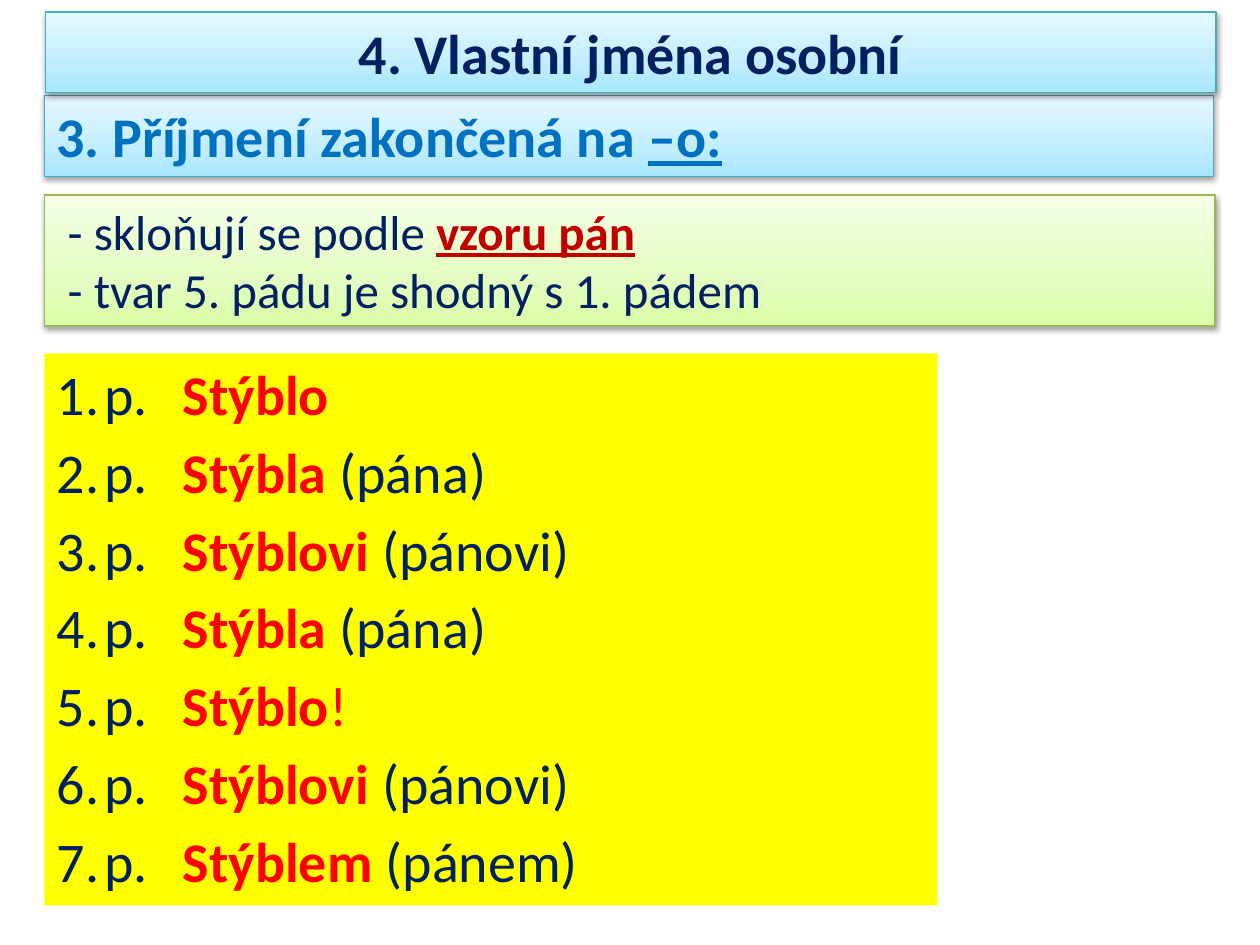
from lxml import etree
from pptx import Presentation
from pptx.dml.color import RGBColor
from pptx.enum import shapes, text
from pptx.oxml import parse_xml
from pptx.oxml.ns import nsdecls, qn
from pptx.util import Pt

NAVY = RGBColor(0x00, 0x20, 0x60)
BLUE = RGBColor(0x00, 0x70, 0xC0)
DARK = RGBColor(0xC0, 0x00, 0x00)
RED = RGBColor(0xFF, 0x00, 0x00)
YELLOW = RGBColor(0xFF, 0xFF, 0x00)
AQUA = RGBColor(0x46, 0xAA, 0xC5)
GREEN = RGBColor(0x98, 0xB9, 0x55)
SKY = [RGBColor(0xA7, 0xE6, 0xFF), RGBColor(0xC1, 0xED, 0xFF), RGBColor(0xE7, 0xF8, 0xFF)]
LIME = [RGBColor(0xDA, 0xFD, 0xA7), RGBColor(0xE4, 0xFC, 0xC2), RGBColor(0xF5, 0xFF, 0xE7)]

CASES = [
    ("Stýblo", ""),
    ("Stýbla", " (pána)"),
    ("Stýblovi", " (pánovi)"),
    ("Stýbla", " (pána)"),
    ("Stýblo", "!"),
    ("Stýblovi", " (pánovi)"),
    ("Stýblem", " (pánem)"),
]


def place(shape, box):
    shape.left, shape.top, shape.width, shape.height = map(Pt, box)
    frame = shape.text_frame
    frame.word_wrap = True
    frame.auto_size = text.MSO_AUTO_SIZE.NONE
    frame.vertical_anchor = text.MSO_ANCHOR.TOP
    return frame


def style(para, size, color, bold=False, align=text.PP_ALIGN.LEFT):
    para.alignment = align
    font = para.font
    font.name, font.size, font.bold = "Calibri", Pt(size), bold
    font.color.rgb = color


def add_run(para, words, color=None, bold=None, under=None):
    run = para.add_run()
    run.text = words
    run.font.bold, run.font.underline = bold, under
    if color is not None:
        run.font.color.rgb = color


def shade(shape, colors, edge):
    """Give a panel its three-stop gradient, thin edge and soft shadow."""
    shape.line.color.rgb = edge
    shape.line.width = Pt(0.75)
    stops = "".join(
        f'<a:gs pos="{pos}"><a:srgbClr val="{color}"/></a:gs>'
        for pos, color in zip((0, 35000, 100000), colors)
    )
    line = shape.line._get_or_add_ln()
    line.addprevious(parse_xml(
        f'<a:gradFill {nsdecls("a")} rotWithShape="1"><a:gsLst>{stops}</a:gsLst>'
        '<a:lin ang="16200000" scaled="0"/></a:gradFill>'))
    line.addnext(parse_xml(
        f'<a:effectLst {nsdecls("a")}><a:outerShdw blurRad="{Pt(3.1)}" dist="{Pt(1.6)}"'
        ' dir="5400000" rotWithShape="0"><a:srgbClr val="000000">'
        '<a:alpha val="38000"/></a:srgbClr></a:outerShdw></a:effectLst>'))


def add_panel(slide, box, colors, edge):
    shape = slide.shapes.add_shape(shapes.MSO_SHAPE.RECTANGLE, *map(Pt, box))
    shade(shape, colors, edge)
    return place(shape, box)


def set_title(slide, box):
    title = slide.shapes.title
    frame = place(title, box)
    shade(title, SKY, AQUA)
    frame.text = "4. Vlastní jména osobní"
    style(frame.paragraphs[0], 32, NAVY, True, text.PP_ALIGN.CENTER)
    slide.shapes._spTree.append(title._element)  # its shadow falls on the heading


def add_heading(slide, box):
    para = add_panel(slide, box, SKY, AQUA).paragraphs[0]
    style(para, 32, BLUE, True)
    add_run(para, "3. Příjmení zakončená na ")
    add_run(para, "–o:", under=True)


def add_rules(slide, box):
    frame = add_panel(slide, box, LIME, GREEN)
    first, last = frame.paragraphs[0], frame.add_paragraph()
    for para in (first, last):
        style(para, 28, NAVY)
    add_run(first, " - skloňují se podle ")
    add_run(first, "vzoru pán", DARK, True, True)
    add_run(last, " - tvar 5. pádu je shodný s 1. pádem")


def set_cases(slide, box):
    body = slide.placeholders[1]
    frame = place(body, box)
    body.fill.solid()
    body.fill.fore_color.rgb = YELLOW
    for i, (name, model) in enumerate(CASES):
        para = frame.add_paragraph() if i else frame.paragraphs[0]
        para.space_before, para.space_after = Pt(0), Pt(6)
        props = para._p.get_or_add_pPr()
        props.set("marL", str(Pt(27)))
        props.set("indent", str(Pt(-27)))
        etree.SubElement(props, qn("a:buFont"), typeface="+mj-lt")
        etree.SubElement(props, qn("a:buAutoNum"), type="arabicPeriod")
        style(para, 32, NAVY)
        add_run(para, "p. \t")
        add_run(para, name, RED, True)
        if model:
            add_run(para, model, RED if model == "!" else None)


def main():
    deck = Presentation()
    deck.slide_width, deck.slide_height = Pt(720), Pt(540)
    slide = deck.slides.add_slide(deck.slide_layouts[1])
    left, width = 25.3, 669
    add_heading(slide, (left, 54.7, width - 1, 46))
    add_rules(slide, (left, 111.4, width, 75))
    set_cases(slide, (left, 202, 510.5, 315.4))
    set_title(slide, (left + 0.6, 6.8, width, 46))
    deck.save("out.pptx")


if __name__ == "__main__":
    main()
